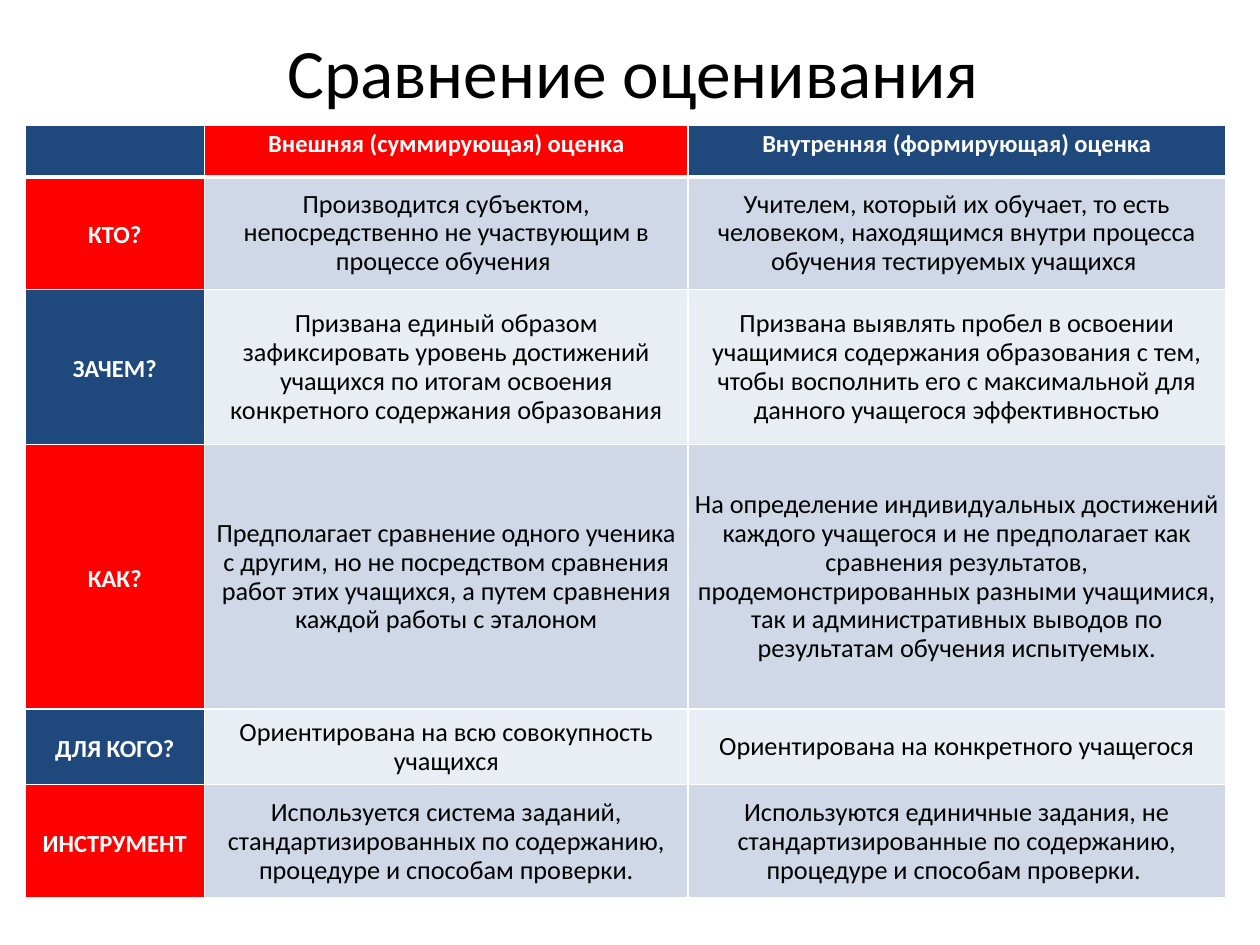
from lxml import etree
from pptx import Presentation
from pptx import util as u
from pptx.dml.color import RGBColor
from pptx.enum import text
from pptx.oxml import ns

BLACK = RGBColor(0x00, 0x00, 0x00)
WHITE = RGBColor(0xFF, 0xFF, 0xFF)
RED = RGBColor(0xFF, 0x00, 0x00)
NAVY = RGBColor(0x1F, 0x49, 0x7D)
BAND_DARK = RGBColor(0xD0, 0xD8, 0xE8)
BAND_LIGHT = RGBColor(0xE9, 0xED, 0xF4)

HEADINGS = ["", "Внешняя (суммирующая) оценка", "Внутренняя (формирующая) оценка"]
CRITERIA = [
    ["КТО?",
     "Производится субъектом, непосредственно не участвующим в процессе обучения ",
     "Учителем, который их обучает, то есть человеком, находящимся внутри процесса "
     "обучения тестируемых учащихся "],
    ["ЗАЧЕМ?",
     "Призвана единый образом зафиксировать уровень достижений учащихся по итогам "
     "освоения конкретного содержания образования",
     "Призвана выявлять пробел в освоении учащимися содержания образования с тем, "
     "чтобы восполнить его с максимальной для данного учащегося эффективностью"],
    ["КАК?",
     "Предполагает сравнение одного ученика с другим, но не посредством сравнения "
     "работ этих учащихся, а путем сравнения каждой работы с эталоном",
     "На определение индивидуальных достижений каждого учащегося и не предполагает "
     "как сравнения результатов, продемонстрированных разными учащимися, так и "
     "административных выводов по результатам обучения испытуемых."],
    ["ДЛЯ КОГО?",
     "Ориентирована на всю совокупность учащихся",
     "Ориентирована на конкретного учащегося"],
    ["ИНСТРУМЕНТ",
     "Используется система заданий, стандартизированных по содержанию, процедуре "
     "и способам проверки.",
     "Используются единичные задания, не стандартизированные по содержанию, "
     "процедуре и способам проверки. "],
]
COLUMN_WIDTHS = [102.8, 276.2, 307.2]
ROW_HEIGHTS = [29.6, 64.4, 88.6, 151.2, 43.2, 64.8]


class SlideBuilder:
    font_name = "Calibri"

    def __init__(self, slide):
        self.slide = slide

    def style(self, paragraph, size, color, bold=False, spacing=None):
        paragraph.alignment = text.PP_ALIGN.CENTER
        paragraph.line_spacing = spacing
        font = paragraph.font
        font.name, font.size, font.bold = self.font_name, u.Pt(size), bold
        font.color.rgb = color

    def title(self, wording, left, top, width, height):
        heading = self.slide.shapes.title
        heading.left, heading.top = u.Pt(left), u.Pt(top)
        heading.width, heading.height = u.Pt(width), u.Pt(height)
        frame = heading.text_frame
        frame.text = wording
        frame.auto_size = text.MSO_AUTO_SIZE.NONE
        frame.vertical_anchor = text.MSO_ANCHOR.MIDDLE
        self.style(frame.paragraphs[0], 39.6, BLACK)

    def table(self, rows, left, top, widths, heights):
        grid = self.slide.shapes.add_table(
            len(rows), len(widths), u.Pt(left), u.Pt(top),
            u.Pt(sum(widths)), u.Pt(sum(heights))).table
        for column, width in zip(grid.columns, widths):
            column.width = u.Pt(width)
        for row, height in zip(grid.rows, heights):
            row.height = u.Pt(height)
        for r, wordings in enumerate(rows):
            for c, wording in enumerate(wordings):
                self.cell(grid.cell(r, c), wording, r, c)

    def cell(self, cell, wording, row, column):
        is_label = row == 0 or column == 0
        cell.margin_left = cell.margin_right = u.Pt(3)
        cell.margin_top = cell.margin_bottom = 0
        cell.vertical_anchor = text.MSO_ANCHOR.MIDDLE if row else text.MSO_ANCHOR.TOP
        cell.text = wording
        paragraph = cell.text_frame.paragraphs[0]
        if is_label:
            self.style(paragraph, 14, WHITE, bold=True, spacing=1.15)
            fill = RED if (row + column) % 2 else NAVY
        else:
            self.style(paragraph, 15, BLACK, spacing=0.9)
            fill = BAND_DARK if row % 2 else BAND_LIGHT
        self.borders(cell, top=3 if row == 1 else 1, bottom=1 if row else 3)
        cell.fill.solid()
        cell.fill.fore_color.rgb = fill

    def borders(self, cell, top, bottom):
        properties = cell._tc.get_or_add_tcPr()
        for side, width in (("L", 1), ("R", 1), ("T", top), ("B", bottom)):
            line = etree.SubElement(properties, ns.qn(f"a:ln{side}"), w=str(u.Pt(width)))
            solid = etree.SubElement(line, ns.qn("a:solidFill"))
            etree.SubElement(solid, ns.qn("a:srgbClr"), val=str(WHITE))


def main():
    deck = Presentation()
    deck.slide_width, deck.slide_height = u.Pt(720), u.Pt(540)
    builder = SlideBuilder(deck.slides.add_slide(deck.slide_layouts[5]))
    builder.title("Сравнение оценивания", 64.8, 20.9, 594, 39.6)
    builder.table([HEADINGS] + CRITERIA, 14.2, 71.5, COLUMN_WIDTHS, ROW_HEIGHTS)
    deck.save("out.pptx")


if __name__ == "__main__":
    main()
